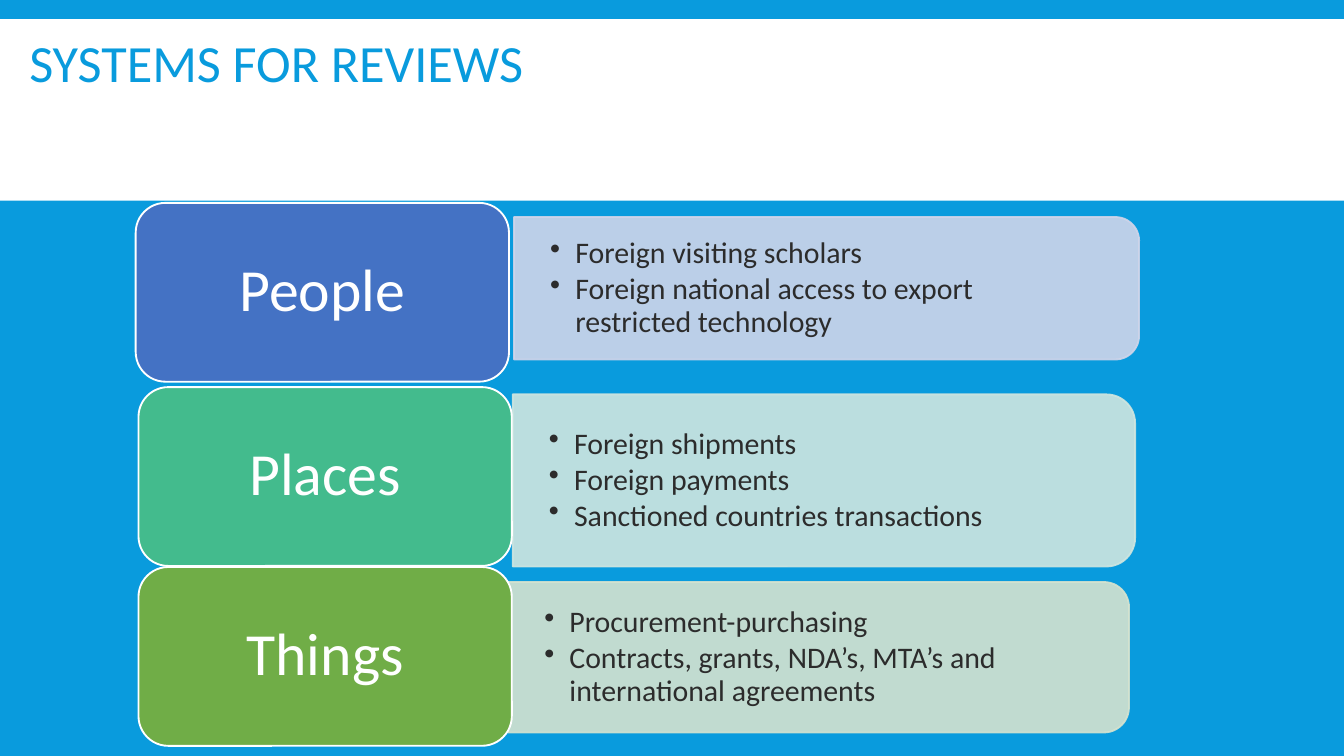
from lxml import etree
from pptx import Presentation
from pptx.dml.color import RGBColor
from pptx.enum import shapes, text
from pptx.oxml import ns
from pptx.util import Pt

COLORS = {
    "blue": "099BDD", "white": "FFFFFF", "ink": "2C2C2C",
    "people": "4472C4", "people_tint": "CFD5EA",
    "places": "43BB8D", "places_tint": "CFE6E0",
    "things": "70AD47", "things_tint": "D5E3CF",
}
TITLE = {"size": Pt(28), "name": "Calibri"}
LABEL = {"size": Pt(32), "name": "Calibri"}
BULLET = {"size": Pt(16), "name": "Calibri"}
CARD_SIZE = (200, 95.8)
ROWS = [
    ("People", "people", (72.7, 108.7), (275.4, 116.3, 334.8, 76.3),
     ["Foreign visiting scholars",
      "Foreign national access to export restricted technology"]),
    ("Places", "places", (74.2, 207.4), (274.7, 211.3, 333.4, 92.2),
     ["Foreign shipments", "Foreign payments",
      "Sanctioned countries transactions"]),
    ("Things", "things", (74.2, 303.8), (272.2, 311.8, 332.6, 80.6),
     ["Procurement-purchasing",
      "Contracts, grants, NDA’s, MTA’s and international agreements"]),
]


def rgb(color):
    return RGBColor.from_string(COLORS[color])


def add_box(s, kind, box, fill, line=None):
    sp = s.shapes.add_shape(kind, *map(Pt, box))
    sp.shadow.inherit = False
    sp.fill.solid()
    sp.fill.fore_color.rgb = rgb(fill)
    if line:
        sp.line.color.rgb = rgb(line)
        sp.line.width = Pt(1)
    else:
        sp.line.fill.background()
    return sp


def setup_frame(sp, inset_x, inset_y):
    tf = sp.text_frame
    frame = {
        "word_wrap": True, "vertical_anchor": text.MSO_ANCHOR.MIDDLE,
        "margin_left": Pt(inset_x), "margin_right": Pt(inset_x),
        "margin_top": Pt(inset_y), "margin_bottom": Pt(inset_y),
    }
    for name, value in frame.items():
        setattr(tf, name, value)
    return tf


def write(p, words, font, color, align=text.PP_ALIGN.LEFT, spacing=0.9):
    p.alignment = align
    p.line_spacing = spacing
    r = p.add_run()
    r.text = words
    for name, value in font.items():
        setattr(r.font, name, value)
    r.font.color.rgb = rgb(color)


def add_bullet(p):
    pPr = p._p.get_or_add_pPr()
    pPr.set("marL", str(Pt(13.5)))
    pPr.set("indent", str(Pt(-13.5)))
    etree.SubElement(pPr, ns.qn("a:buChar")).set("char", "•")


def add_title(s, words):
    sp = s.shapes.add_textbox(*map(Pt, (8.6, 11.5, 555, 48.2)))
    tf = setup_frame(sp, 7.2, 3.6)
    write(tf.paragraphs[0], words, TITLE, "blue", spacing=0.85)


def add_panel(s, box, color):
    x, y, w, h = box
    upright = (x + (w - h) / 2, y + (h - w) / 2, h, w)
    sp = add_box(s, shapes.MSO_SHAPE.ROUND_2_SAME_RECTANGLE, upright,
                 color, color)
    sp.rotation = 90
    for clr in sp._element.spPr.iter(ns.qn("a:srgbClr")):
        etree.SubElement(clr, ns.qn("a:alpha")).set("val", "90000")


def add_bullets(s, box, items):
    x, y, w, h = box
    sp = s.shapes.add_textbox(*map(Pt, (x, y + 3.6, w - 4, h - 7.2)))
    tf = setup_frame(sp, 19.4, 10)
    for i, item in enumerate(items):
        p = tf.add_paragraph() if i else tf.paragraphs[0]
        write(p, item, BULLET, "ink")
        p.space_after = Pt(2)
        add_bullet(p)


def add_card(s, corner, color, label):
    sp = add_box(s, shapes.MSO_SHAPE.ROUNDED_RECTANGLE,
                 corner + CARD_SIZE, color, "white")
    tf = setup_frame(sp, 9.4, 5)
    write(tf.paragraphs[0], label, LABEL, "white", text.PP_ALIGN.CENTER)


def main():
    prs = Presentation()
    prs.slide_width, prs.slide_height = Pt(720), Pt(405)
    s = prs.slides.add_slide(prs.slide_layouts[6])
    s.background.fill.solid()
    s.background.fill.fore_color.rgb = rgb("blue")
    add_box(s, shapes.MSO_SHAPE.RECTANGLE, (0, 10.3, 720, 97.2), "white")
    for label, color, corner, panel, items in ROWS:
        add_panel(s, panel, color + "_tint")
        add_bullets(s, panel, items)
        add_card(s, corner, color, label)
    add_title(s, "SYSTEMS FOR REVIEWS")
    prs.save("out.pptx")


if __name__ == "__main__":
    main()
